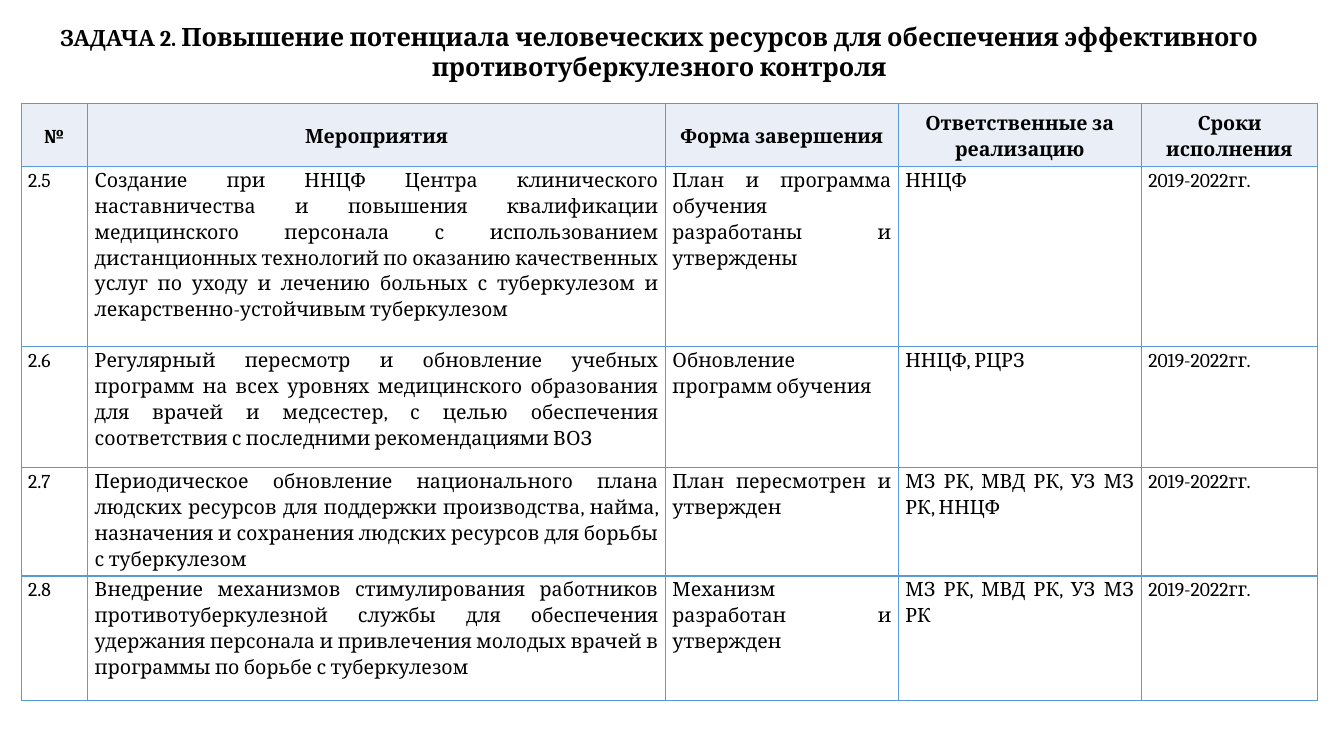
from lxml import etree
from pptx import Presentation
from pptx import util as u
from pptx.dml.color import RGBColor
from pptx.enum import text
from pptx.oxml import ns

PX = 9144
FONT = "Cambria"
COLORS = {"ink": "000000", "header": "EAEFF7", "border": "5B9BD5"}
COLUMN_WIDTHS = [66, 573, 231, 241, 175]
ROW_HEIGHTS = [62, 179, 120, 99, 124]
HEADINGS = ["№", "Мероприятия", "Форма завершения",
            "Ответственные за реализацию", "Сроки исполнения"]
PERIOD = "2019-2022гг."
ACTIVITIES = [
    ["2.5", "Создание при ННЦФ Центра клинического наставничества и повышения "
     "квалификации медицинского персонала с использованием дистанционных технологий "
     "по оказанию качественных услуг по уходу и лечению больных с туберкулезом и "
     "лекарственно-устойчивым туберкулезом",
     "План и программа обучения разработаны и утверждены", "ННЦФ", PERIOD],
    ["2.6", "Регулярный пересмотр и обновление учебных программ на всех уровнях "
     "медицинского образования для врачей и медсестер, с целью обеспечения "
     "соответствия с последними рекомендациями ВОЗ",
     "Обновление программ обучения", "ННЦФ, РЦРЗ", PERIOD],
    ["2.7", "Периодическое обновление национального плана людских ресурсов для "
     "поддержки производства, найма, назначения и сохранения людских ресурсов для "
     "борьбы с туберкулезом",
     "План пересмотрен и утвержден", "МЗ РК, МВД РК, УЗ МЗ РК, ННЦФ", PERIOD],
    ["2.8", "Внедрение механизмов стимулирования работников противотуберкулезной "
     "службы для обеспечения удержания персонала и привлечения молодых врачей в "
     "программы по борьбе с туберкулезом",
     "Механизм разработан и утвержден", "МЗ РК, МВД РК, УЗ МЗ РК", PERIOD],
]
CELL_MARGINS = {"margin_left": 7 * PX, "margin_right": 7 * PX,
                "margin_top": 0, "margin_bottom": 0}
HEADER_PARAGRAPH = {"alignment": text.PP_ALIGN.CENTER, "line_spacing": 1.15}
BODY_PARAGRAPH = {"alignment": text.PP_ALIGN.JUSTIFY, "line_spacing": 1.15,
                  "space_after": u.Pt(10)}


def apply(target, values):
    """Set each attribute of the target from a dict."""
    for name, value in values.items():
        setattr(target, name, value)


def add_run(paragraph, words, size, bold):
    """Append a run in the slide font."""
    run = paragraph.add_run()
    run.text = words
    apply(run.font, {"name": FONT, "size": u.Pt(size), "bold": bold})
    run.font.color.rgb = RGBColor.from_string(COLORS["ink"])


def add_title(slide):
    """Add the centred heading with a smaller task label."""
    frame = slide.shapes.add_textbox(34 * PX, 16 * PX, 1240 * PX, 71 * PX).text_frame
    apply(frame, {"word_wrap": True, "auto_size": text.MSO_AUTO_SIZE.SHAPE_TO_FIT_TEXT})
    heading = frame.paragraphs[0]
    heading.alignment = text.PP_ALIGN.CENTER
    add_run(heading, "ЗАДАЧА 2. ", 16, True)
    add_run(heading, "Повышение потенциала человеческих ресурсов для обеспечения "
            "эффективного противотуберкулезного контроля", 18, True)


def set_borders(cell, top):
    """Draw the four cell borders, the top one with its own width in points."""
    properties = cell._tc.get_or_add_tcPr()
    widths = {"lnL": 1, "lnR": 1, "lnT": top, "lnB": 1}
    for index, (side, width) in enumerate(widths.items()):
        line = etree.Element(ns.qn(f"a:{side}"), w=str(u.Pt(width)))
        fill = etree.SubElement(line, ns.qn("a:solidFill"))
        etree.SubElement(fill, ns.qn("a:srgbClr"), val=COLORS["border"])
        properties.insert(index, line)


def fill_cell(cell, words, is_header, top):
    """Write and format one table cell."""
    apply(cell, CELL_MARGINS)
    paragraph = cell.text_frame.paragraphs[0]
    apply(paragraph, HEADER_PARAGRAPH if is_header else BODY_PARAGRAPH)
    add_run(paragraph, words, 14, is_header)
    if is_header:
        cell.vertical_anchor = text.MSO_ANCHOR.MIDDLE
        cell.fill.solid()
        cell.fill.fore_color.rgb = RGBColor.from_string(COLORS["header"])
    else:
        cell.fill.background()
    set_borders(cell, top)


def add_plan(slide):
    """Add the table of activities."""
    records = [HEADINGS, *ACTIVITIES]
    plan = slide.shapes.add_table(
        len(records), len(HEADINGS), 21 * PX, 103 * PX,
        sum(COLUMN_WIDTHS) * PX, sum(ROW_HEIGHTS) * PX).table
    apply(plan, {"first_row": False, "horz_banding": False})
    for column, width in zip(plan.columns, COLUMN_WIDTHS):
        column.width = width * PX
    for index, (row, height, record) in enumerate(zip(plan.rows, ROW_HEIGHTS, records)):
        row.height = height * PX
        top = 2 if index == len(records) - 1 else 1
        for cell, words in zip(row.cells, record):
            fill_cell(cell, words, index == 0, top)


def main():
    """Build the slide and save it."""
    deck = Presentation()
    apply(deck, {"slide_width": 1333 * PX, "slide_height": 750 * PX})
    slide = deck.slides.add_slide(deck.slide_layouts[6])
    add_title(slide)
    add_plan(slide)
    deck.save("out.pptx")


if __name__ == "__main__":
    main()
